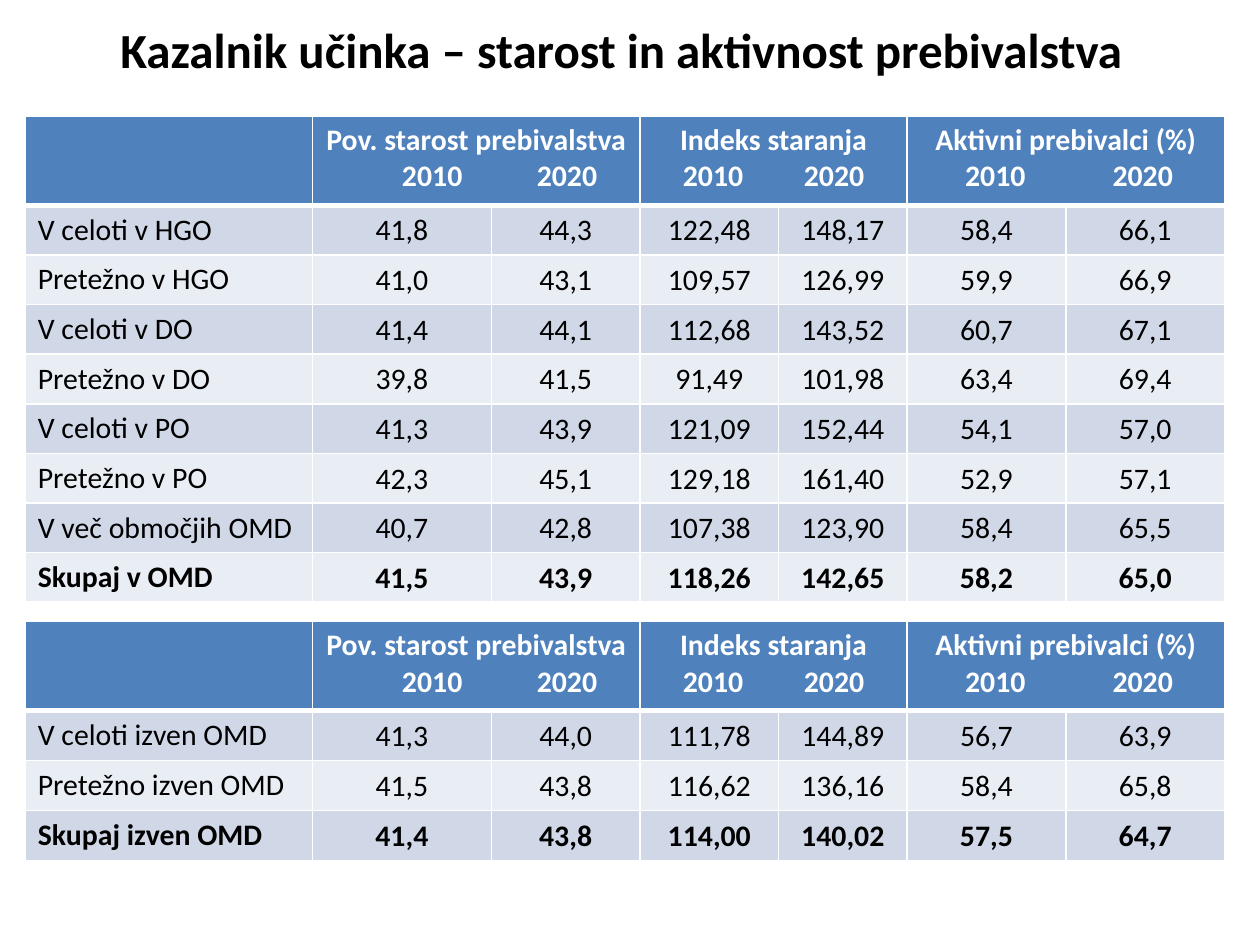
from lxml import etree
from pptx import Presentation
from pptx.dml.color import RGBColor
from pptx.enum.text import MSO_ANCHOR, PP_ALIGN
from pptx.oxml.ns import qn
from pptx.util import Inches, Pt

CENTER, LEFT = PP_ALIGN.CENTER, PP_ALIGN.LEFT
MIDDLE, TOP = MSO_ANCHOR.MIDDLE, MSO_ANCHOR.TOP
BLACK = RGBColor(0x00, 0x00, 0x00)
WHITE = RGBColor(0xFF, 0xFF, 0xFF)
HEADER_BLUE = RGBColor(0x4F, 0x81, 0xBD)
BANDS = (RGBColor(0xD0, 0xD8, 0xE8), RGBColor(0xE9, 0xED, 0xF4))
FONT = "Calibri"

# Content
TITLE = "Kazalnik učinka – starost in aktivnost prebivalstva"
YEARS = ("2010", "2020")
# Heading and the centres of its two years, in inches from the text edge
INDICATORS = [
    ("Pov. starost prebivalstva", (0.85, 1.92)),
    ("Indeks staranja", (0.48, 1.44)),
    ("Aktivni prebivalci (%)", (0.6, 1.77)),
]
INSIDE_ROWS = [
    ("V celoti v HGO", "41,8", "44,3", "122,48", "148,17", "58,4", "66,1"),
    ("Pretežno v HGO", "41,0", "43,1", "109,57", "126,99", "59,9", "66,9"),
    ("V celoti v DO", "41,4", "44,1", "112,68", "143,52", "60,7", "67,1"),
    ("Pretežno v DO", "39,8", "41,5", "91,49", "101,98", "63,4", "69,4"),
    ("V celoti v PO", "41,3", "43,9", "121,09", "152,44", "54,1", "57,0"),
    ("Pretežno v PO", "42,3", "45,1", "129,18", "161,40", "52,9", "57,1"),
    ("V več območjih OMD", "40,7", "42,8", "107,38", "123,90", "58,4", "65,5"),
    ("Skupaj v OMD", "41,5", "43,9", "118,26", "142,65", "58,2", "65,0"),
]
OUTSIDE_ROWS = [
    ("V celoti izven OMD", "41,3", "44,0", "111,78", "144,89", "56,7", "63,9"),
    ("Pretežno izven OMD", "41,5", "43,8", "116,62", "136,16", "58,4", "65,8"),
    ("Skupaj izven OMD", "41,4", "43,8", "114,00", "140,02", "57,5", "64,7"),
]
# Top, height and body rows of each table
TABLES = [(0.92, 3.86, INSIDE_ROWS), (4.93, 1.9, OUTSIDE_ROWS)]
TABLE_LEFT = 0.2
COLUMN_WIDTHS = (2.28, 1.42, 1.18, 1.1, 1.02, 1.26, 1.26)
HEADER_HEIGHT = 0.71


def format_paragraph(paragraph, size, color, bold, alignment):
    paragraph.alignment = alignment
    font = paragraph.font
    font.name, font.size, font.bold = FONT, Pt(size), bold
    font.color.rgb = color


def style_cell(cell, fill, top=1, bottom=1):
    cell.fill.solid()
    cell.fill.fore_color.rgb = fill
    properties = cell._tc.get_or_add_tcPr()
    sides = (("a:lnL", 1), ("a:lnR", 1), ("a:lnT", top), ("a:lnB", bottom))
    for position, (tag, width) in enumerate(sides):
        line = etree.Element(qn(tag), w=str(Pt(width)))
        solid = etree.SubElement(line, qn("a:solidFill"))
        etree.SubElement(solid, qn("a:srgbClr"), val=str(WHITE))
        properties.insert(position, line)


def add_center_tabs(paragraph, centers):
    tabs = etree.SubElement(paragraph._p.get_or_add_pPr(), qn("a:tabLst"))
    for center in centers:
        etree.SubElement(tabs, qn("a:tab"), pos=str(Inches(center)), algn="ctr")
    # The tab list comes before the default run properties
    defaults = paragraph._p.pPr.find(qn("a:defRPr"))
    if defaults is not None:
        defaults.addprevious(tabs)


def fill_header(table):
    for column in range(len(COLUMN_WIDTHS)):
        style_cell(table.cell(0, column), HEADER_BLUE, bottom=3)
    for index, (heading, centers) in enumerate(INDICATORS):
        first = 1 + 2 * index
        cell = table.cell(0, first)
        cell.merge(table.cell(0, first + 1))
        cell.vertical_anchor = TOP
        heading_line = cell.text_frame.paragraphs[0]
        heading_line.text = heading
        format_paragraph(heading_line, 17, WHITE, True, CENTER)
        year_line = cell.text_frame.add_paragraph()
        year_line.text = "".join("\t" + year for year in YEARS)
        format_paragraph(year_line, 17, WHITE, True, LEFT)
        add_center_tabs(year_line, centers)


def fill_body(table, rows):
    for row, values in enumerate(rows, start=1):
        is_total = row == len(rows)
        for column, value in enumerate(values):
            cell = table.cell(row, column)
            style_cell(cell, BANDS[(row - 1) % 2], top=3 if row == 1 else 1)
            cell.vertical_anchor = MIDDLE
            if column:
                cell.margin_left = cell.margin_right = cell.margin_top = Inches(0.01)
                cell.margin_bottom = 0
            paragraph = cell.text_frame.paragraphs[0]
            paragraph.text = value
            format_paragraph(paragraph, 17, BLACK, is_total,
                             CENTER if column else LEFT)


def add_indicator_table(slide, top, height, rows):
    frame = slide.shapes.add_table(
        len(rows) + 1, len(COLUMN_WIDTHS), Inches(TABLE_LEFT), Inches(top),
        Inches(sum(COLUMN_WIDTHS)), Inches(height))
    table = frame.table
    for column, width in zip(table.columns, COLUMN_WIDTHS):
        column.width = Inches(width)
    body_height = (height - HEADER_HEIGHT) / len(rows)
    for index, row in enumerate(table.rows):
        row.height = Inches(body_height if index else HEADER_HEIGHT)
    fill_header(table)
    fill_body(table, rows)


def main():
    presentation = Presentation()
    presentation.slide_width, presentation.slide_height = Inches(10), Inches(7.5)
    slide = presentation.slides.add_slide(presentation.slide_layouts[5])

    # Title
    title = slide.shapes.title
    title.left, title.top = Inches(0.43), Inches(0.02)
    title.width, title.height = Inches(9), Inches(0.74)
    title.text_frame.text = TITLE
    title.text_frame.vertical_anchor = MIDDLE
    format_paragraph(title.text_frame.paragraphs[0], 28, BLACK, True, CENTER)

    # Tables
    for top, height, rows in TABLES:
        add_indicator_table(slide, top, height, rows)

    presentation.save("out.pptx")


if __name__ == "__main__":
    main()
